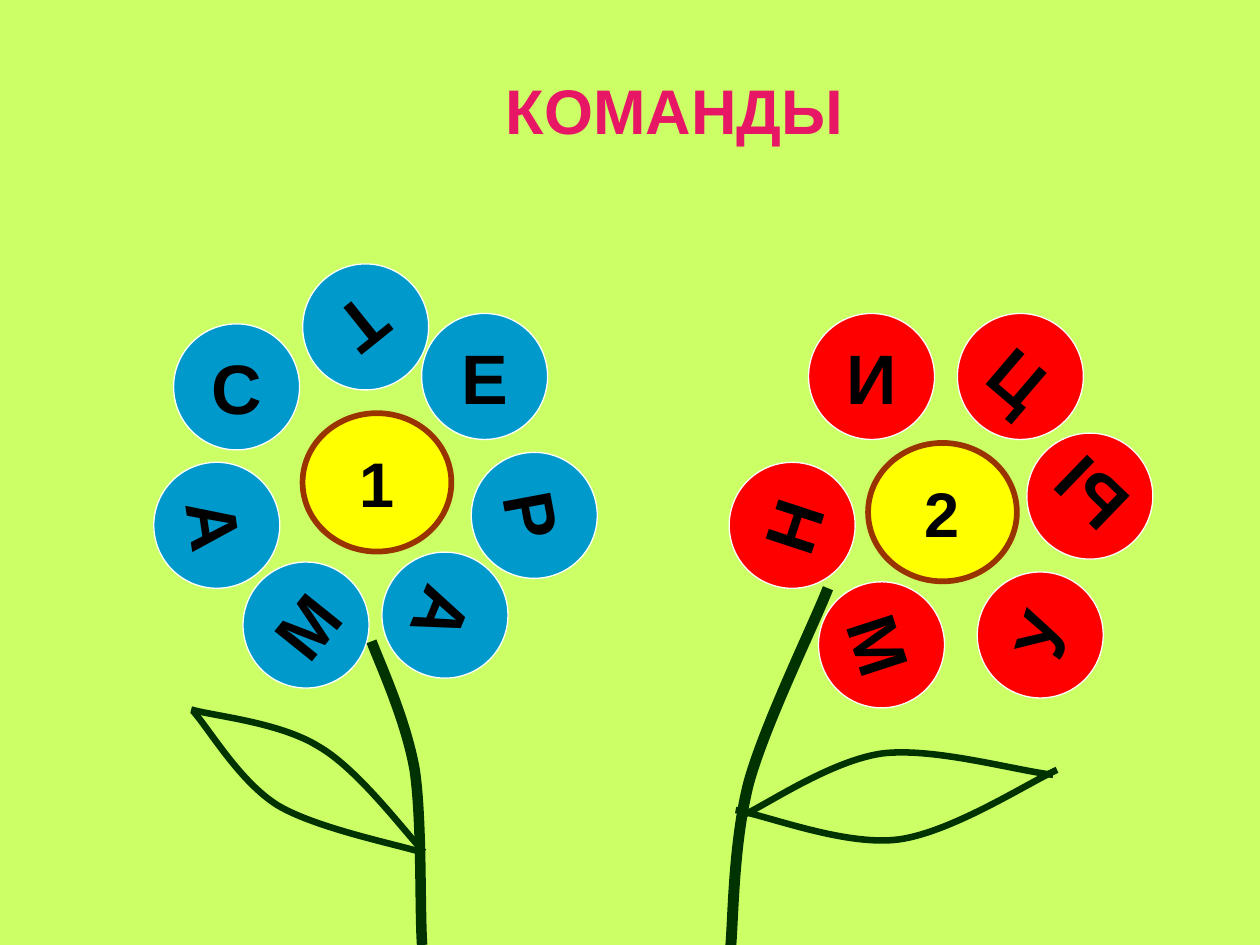
from math import cos, radians, sin

from lxml import etree
from pptx import Presentation
from pptx.dml.color import RGBColor
from pptx.enum.shapes import MSO_SHAPE
from pptx.enum.text import MSO_ANCHOR, PP_ALIGN
from pptx.oxml.ns import qn
from pptx.util import Cm, Pt

OVAL = MSO_SHAPE.OVAL
TOP = MSO_ANCHOR.TOP
MIDDLE = MSO_ANCHOR.MIDDLE
CENTER = PP_ALIGN.CENTER
FONT = "Arial"
TITLE_ONLY = 5
PETAL_SIZE = 2.54
CORE_WIDTH, CORE_HEIGHT = 3, 2.79

COLORS = {
    "meadow": "CCFF66", "title": "E81766", "text": "000000",
    "blue": "0099CC", "red": "FF0000", "petal_edge": "FFFFFF",
    "core": "FFFF00", "core_edge": "993300", "stem": "003300",
}

FLOWERS = [
    ("1", (6.1, 8.33), "blue", [
        ("С", 3.5, 6.53, 0), ("Е", 8.5, 6.32, 0),
        ("А", 3.1, 9.32, 81.5), ("М", 4.9, 11.33, 308.8),
        ("Т", 6.1, 5.32, 141.2), ("А", 7.7, 11.13, 112.3),
        ("Р", 9.5, 9.12, 79.4),
    ]),
    ("2", (17.5, 8.93), "red", [
        ("Н", 14.7, 9.32, 288.2), ("М", 16.5, 11.73, 72),
        ("И", 16.3, 6.32, 0), ("Ц", 19.3, 6.32, 40.5),
        ("Ы", 20.7, 8.73, 224), ("У", 19.7, 11.53, 286.7),
    ]),
]

STEMS = [
    (6, 0, (0, 0), [
        (7.49, 12.93), (7.65, 13.36), (8.18, 14.5), (8.36, 15.52),
        (8.51, 16.54), (8.46, 18.31), (8.51, 19.05)]),
    (6.25, 204.5, (15.7, 15.45), [
        (14.73, 19.05), (14.78, 18.52), (14.78, 16.99), (15.09, 15.77),
        (15.42, 14.58), (16.36, 12.67), (16.69, 11.84)]),
]
LEAF_EDGES = [
    (3.75, 320, (6.21, 15.74), [
        (3.84, 14.3), (4.27, 14.43), (5.61, 14.55), (6.4, 15.04),
        (7.19, 15.49), (8.1, 16.71), (8.53, 17.17)]),
    (3.75, 0, (0, 0), [
        (8.46, 17.17), (7.98, 17.02), (6.35, 16.69), (5.59, 16.23),
        (4.83, 15.75), (4.24, 14.73), (3.89, 14.33)]),
    (3.75, 0, (0, 0), [
        (14.99, 16.43), (15.44, 16.23), (16.74, 15.34), (17.78, 15.19),
        (18.82, 15.06), (20.5, 15.54), (21.23, 15.62)]),
    (3.75, 0, (0, 0), [
        (21.31, 15.52), (20.78, 15.75), (19.23, 16.76), (18.14, 16.92),
        (17.07, 17.07), (15.52, 16.46), (14.83, 16.33)]),
]


def color(name):
    """Return the named colour."""
    return RGBColor.from_string(COLORS[name])


def write(shape, text, size, text_color, anchor=MIDDLE):
    """Put one bold centred line of text in a shape."""
    frame = shape.text_frame
    frame.word_wrap = False
    frame.vertical_anchor = anchor
    para = frame.paragraphs[0]
    para.text = text
    para.alignment = CENTER
    para.font.name = FONT
    para.font.size = Pt(size)
    para.font.bold = True
    para.font.color.rgb = color(text_color)


def set_line(shape, line_color, width):
    """Outline a shape and drop its shadow."""
    shape.shadow.inherit = False
    shape.line.color.rgb = color(line_color)
    shape.line.width = Pt(width)


def add_disc(page, left, top, width, height, fill):
    """Add a filled oval."""
    disc = page.shapes.add_shape(OVAL, Cm(left), Cm(top), Cm(width), Cm(height))
    disc.fill.solid()
    disc.fill.fore_color.rgb = color(fill)
    return disc


def add_flower(page, number, core_at, petal_color, petals):
    """Add lettered petals around a numbered core."""
    for letter, left, top, angle in petals:
        petal = add_disc(page, left, top, PETAL_SIZE, PETAL_SIZE, petal_color)
        petal.rotation = angle
        set_line(petal, "petal_edge", 0.75)
        write(petal, letter, 40, "text")
    core = add_disc(page, *core_at, CORE_WIDTH, CORE_HEIGHT, "core")
    set_line(core, "core_edge", 3.25)
    write(core, number, 36, "text")


def turn_back(point, center, angle):
    """Undo a clockwise turn of a point about a center."""
    x, y = point[0] - center[0], point[1] - center[1]
    cosine, sine = cos(radians(angle)), sin(radians(angle))
    return (Cm(center[0] + x * cosine + y * sine),
            Cm(center[1] - x * sine + y * cosine))


def make_cubic(curve):
    """Join each three straight segments into one cubic Bezier segment."""
    segments = list(curve.element.iter(qn("a:lnTo")))
    for first in range(0, len(segments), 3):
        outline = segments[first].getparent()
        cubic = etree.SubElement(outline, qn("a:cubicBezTo"))
        for segment in segments[first:first + 3]:
            cubic.append(segment[0])
            outline.remove(segment)


def add_curve(page, width, angle, center, controls):
    """Draw a smooth open line through Bezier control points."""
    start, *others = [turn_back(point, center, angle) for point in controls]
    builder = page.shapes.build_freeform(*start)
    builder.add_line_segments(others, close=False)
    curve = builder.convert_to_shape()
    make_cubic(curve)
    curve.rotation = angle
    curve.fill.background()
    set_line(curve, "stem", width)


def add_title(page, text):
    """Place and format the slide title."""
    title = page.shapes.title
    title.left, title.top = Cm(6.1), Cm(1.32)
    title.width, title.height = Cm(15), Cm(2)
    write(title, text, 36, "title", TOP)


def main():
    """Build the slide with two team flowers."""
    deck = Presentation()
    deck.slide_width, deck.slide_height = Cm(25.4), Cm(19.05)
    page = deck.slides.add_slide(deck.slide_layouts[TITLE_ONLY])
    page.background.fill.solid()
    page.background.fill.fore_color.rgb = color("meadow")
    add_title(page, "КОМАНДЫ")
    for flower in FLOWERS:
        add_flower(page, *flower)
    for curve in STEMS + LEAF_EDGES:
        add_curve(page, *curve)
    deck.save("out.pptx")


if __name__ == "__main__":
    main()
